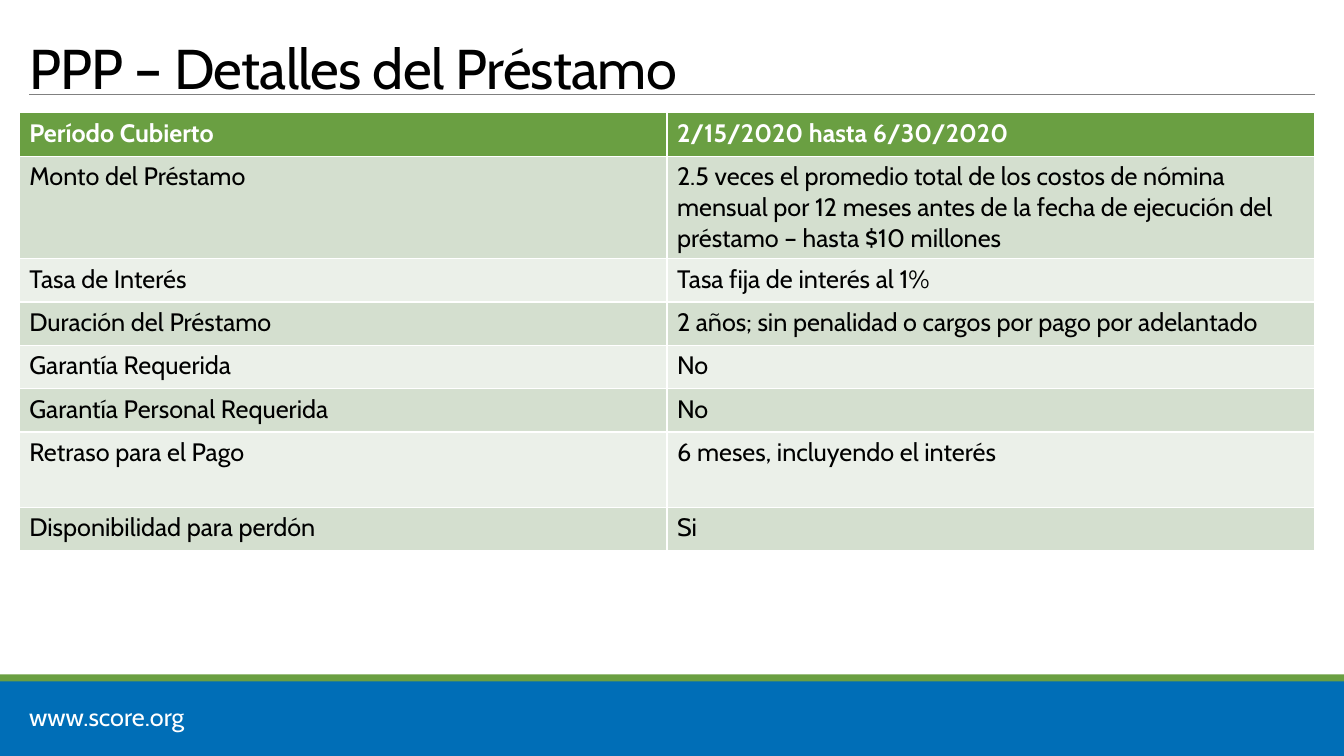
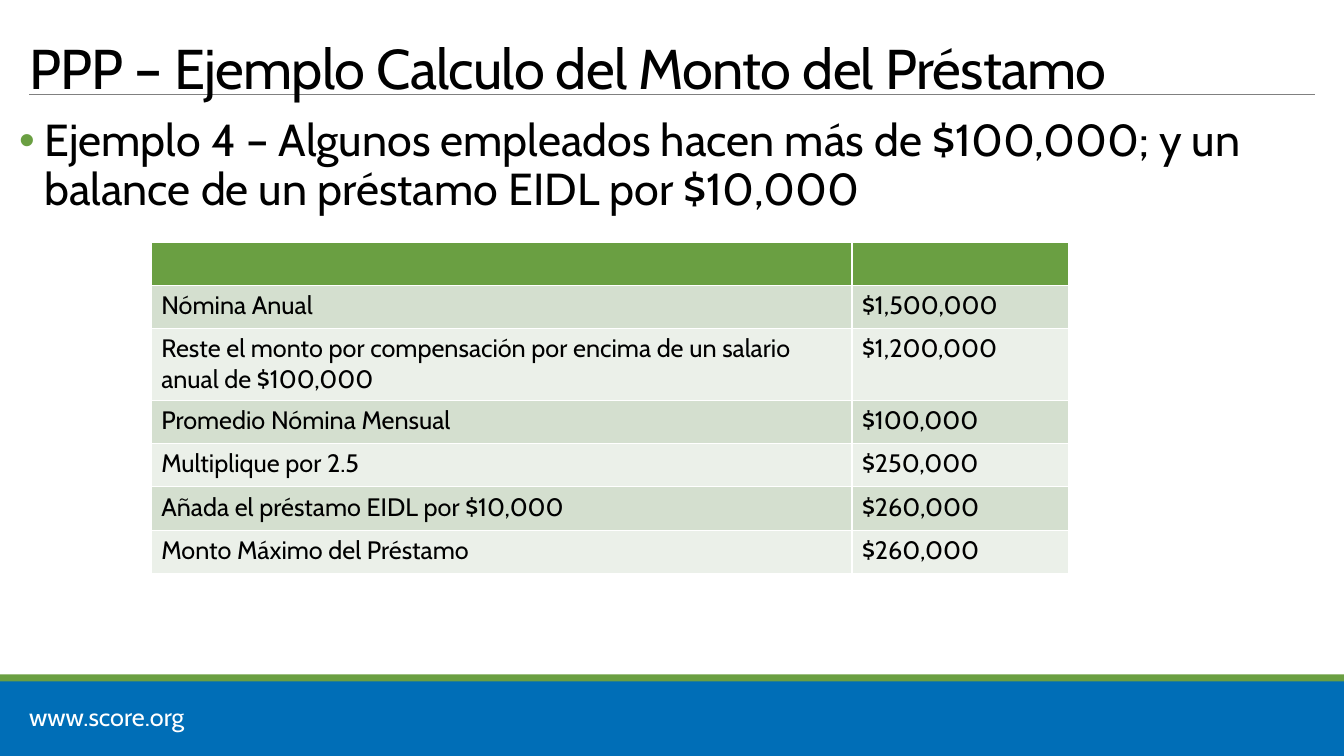
import pptx
import pptx.dml.color
import pptx.enum.shapes
import pptx.enum.text
import pptx.oxml
import pptx.oxml.ns
import pptx.util
from lxml import etree

Inches, Pt = pptx.util.Inches, pptx.util.Pt
RGBColor = pptx.dml.color.RGBColor
qn = pptx.oxml.ns.qn

WHITE = RGBColor(0xFF, 0xFF, 0xFF)
BLACK = RGBColor(0x00, 0x00, 0x00)
GRAY = RGBColor(0x80, 0x80, 0x80)
BLUE = RGBColor(0x00, 0x6E, 0xB7)
GREEN = RGBColor(0x6A, 0x9F, 0x42)
DARK_BAND = RGBColor(0xD4, 0xDF, 0xCF)
LIGHT_BAND = RGBColor(0xEB, 0xF0, 0xE9)

FONT = "Cabin"
SLIDE_W, SLIDE_H = 13.33, 7.5
MARGIN = 0.19
CONTENT_W = 12.85
CONTENT_TOP = 1.12
ROW_H, TALL_ROW_H = 0.43, 0.75
TITLE_ONLY, TITLE_AND_BODY = 5, 1

LOAN_DETAILS = [
    ("Período Cubierto", "2/15/2020 hasta 6/30/2020"),
    ("Monto del Préstamo",
     "2.5 veces el promedio total de los costos de nómina mensual por 12 meses "
     "antes de la fecha de ejecución del préstamo – hasta $10 millones"),
    ("Tasa de Interés", "Tasa fija de interés al 1%"),
    ("Duración del Préstamo", "2 años; sin penalidad o cargos por pago por adelantado"),
    ("Garantía Requerida", "No"),
    ("Garantía Personal Requerida", "No"),
    ("Retraso para el Pago", "6 meses, incluyendo el interés"),
    ("Disponibilidad para perdón", "Si"),
]
LOAN_CALCULATION = [
    ("", ""),
    ("Nómina Anual", "$1,500,000"),
    ("Reste el monto por compensación por encima de un salario anual de $100,000",
     "$1,200,000"),
    ("Promedio Nómina Mensual", "$100,000"),
    ("Multiplique por 2.5", "$250,000"),
    ("Añada el préstamo EIDL por $10,000", "$260,000"),
    ("Monto Máximo del Préstamo", "$260,000"),
]


def place(shape, left, top, width, height):
    shape.left, shape.top = Inches(left), Inches(top)
    shape.width, shape.height = Inches(width), Inches(height)


def style(paragraph, size, color, bold=False):
    font = paragraph.font
    font.name, font.size, font.bold = FONT, Pt(size), bold
    font.color.rgb = color


def add_band(slide, top, height, color):
    band = slide.shapes.add_shape(
        pptx.enum.shapes.MSO_SHAPE.RECTANGLE,
        0, Inches(top), Inches(SLIDE_W), Inches(height))
    band.shadow.inherit = False
    band.fill.solid()
    band.fill.fore_color.rgb = color
    band.line.fill.background()
    return band


def add_web_address(slide, left, top, width, height):
    address = slide.shapes.add_textbox(
        Inches(left), Inches(top), Inches(width), Inches(height))
    address.text_frame.word_wrap = True
    address.text_frame.text = "www.score.org"
    style(address.text_frame.paragraphs[0], 18, WHITE)
    return address


def add_title_rule(slide, left, right, y):
    rule = slide.shapes.add_connector(
        pptx.enum.shapes.MSO_CONNECTOR.STRAIGHT,
        Inches(left), Inches(y), Inches(right), Inches(y))
    rule.line.color.rgb = GRAY
    rule.line.width = Pt(0.5)
    etree.SubElement(rule.element.spPr, qn("a:effectLst"))
    return rule


def furnish_master(master, slide):
    """Draw the shared bands, address and rule on a slide, then move them to its master."""
    furniture = [
        add_band(slide, 6.7, SLIDE_H - 6.7, BLUE),
        add_band(slide, 6.69, 0.07, GREEN),
        add_web_address(slide, MARGIN, 6.91, 2.02, 0.4),
        add_title_rule(slide, 0.29, 13.04, 0.94),
    ]
    for shape_id, shape in enumerate(furniture, start=20):
        shape.element.xpath(".//p:cNvPr")[0].set("id", str(shape_id))
        master.shapes.element.append(shape.element)


def set_title(slide, text):
    title = slide.shapes.title
    place(title, MARGIN, 0.31, CONTENT_W, 0.74)
    frame = title.text_frame
    frame.text = text
    frame.auto_size = pptx.enum.text.MSO_AUTO_SIZE.NONE
    frame.vertical_anchor = pptx.enum.text.MSO_ANCHOR.BOTTOM
    heading = frame.paragraphs[0]
    heading.alignment = pptx.enum.text.PP_ALIGN.LEFT
    heading.line_spacing = 0.85
    style(heading, 40, BLACK)
    heading.runs[0].font._element.set("spc", "-50")


def set_bullet(paragraph, indent):
    properties = paragraph._p.get_or_add_pPr()
    properties.set("marL", str(Inches(indent)))
    properties.set("indent", str(-Inches(indent)))
    bullet_color = etree.SubElement(properties, qn("a:buClr"))
    etree.SubElement(bullet_color, qn("a:srgbClr")).set("val", str(GREEN))
    etree.SubElement(properties, qn("a:buChar")).set("char", "•")


def set_body(slide, text):
    body = slide.placeholders[1]
    place(body, MARGIN, CONTENT_TOP, CONTENT_W, 5.3)
    frame = body.text_frame
    frame.text = text
    frame.auto_size = pptx.enum.text.MSO_AUTO_SIZE.NONE
    frame.margin_left = frame.margin_right = 0
    example = frame.paragraphs[0]
    set_bullet(example, 0.25)
    example.line_spacing = 0.9
    example.space_before = Pt(0)
    example.space_after = Pt(2)
    style(example, 32, BLACK)


def add_banded_table(slide, left, top, column_widths, rows, tall_rows=()):
    heights = [TALL_ROW_H if r in tall_rows else ROW_H for r in range(len(rows))]
    table = slide.shapes.add_table(
        len(rows), len(column_widths), Inches(left), Inches(top),
        Inches(sum(column_widths)), Inches(sum(heights))).table
    for column, width in zip(table.columns, column_widths):
        column.width = Inches(width)
    for r, (values, height) in enumerate(zip(rows, heights)):
        table.rows[r].height = Inches(height)
        is_header = r == 0
        fill = GREEN if is_header else (LIGHT_BAND, DARK_BAND)[r % 2]
        for c, value in enumerate(values):
            cell = table.cell(r, c)
            cell.fill.solid()
            cell.fill.fore_color.rgb = fill
            cell.text = value
            style(cell.text_frame.paragraphs[0], 18,
                  WHITE if is_header else BLACK, is_header)


def build_details_slide(slide):
    set_title(slide, "PPP – Detalles del Préstamo")
    add_banded_table(slide, MARGIN, CONTENT_TOP, [CONTENT_W / 2] * 2,
                     LOAN_DETAILS, tall_rows=(1, 6))


def build_calculation_slide(slide):
    set_title(slide, "PPP – Ejemplo Calculo del Monto del Préstamo")
    set_body(slide, "Ejemplo 4 – Algunos empleados hacen más de $100,000; "
                    "y un balance de un préstamo EIDL por $10,000")
    add_banded_table(slide, 1.5, 2.4, [6.95, 2.15], LOAN_CALCULATION)


def main():
    deck = pptx.Presentation()
    deck.slide_width, deck.slide_height = Inches(SLIDE_W), Inches(SLIDE_H)
    details = deck.slides.add_slide(deck.slide_layouts[TITLE_ONLY])
    furnish_master(deck.slide_master, details)
    build_details_slide(details)
    build_calculation_slide(deck.slides.add_slide(deck.slide_layouts[TITLE_AND_BODY]))
    deck.save("out.pptx")


if __name__ == "__main__":
    main()
